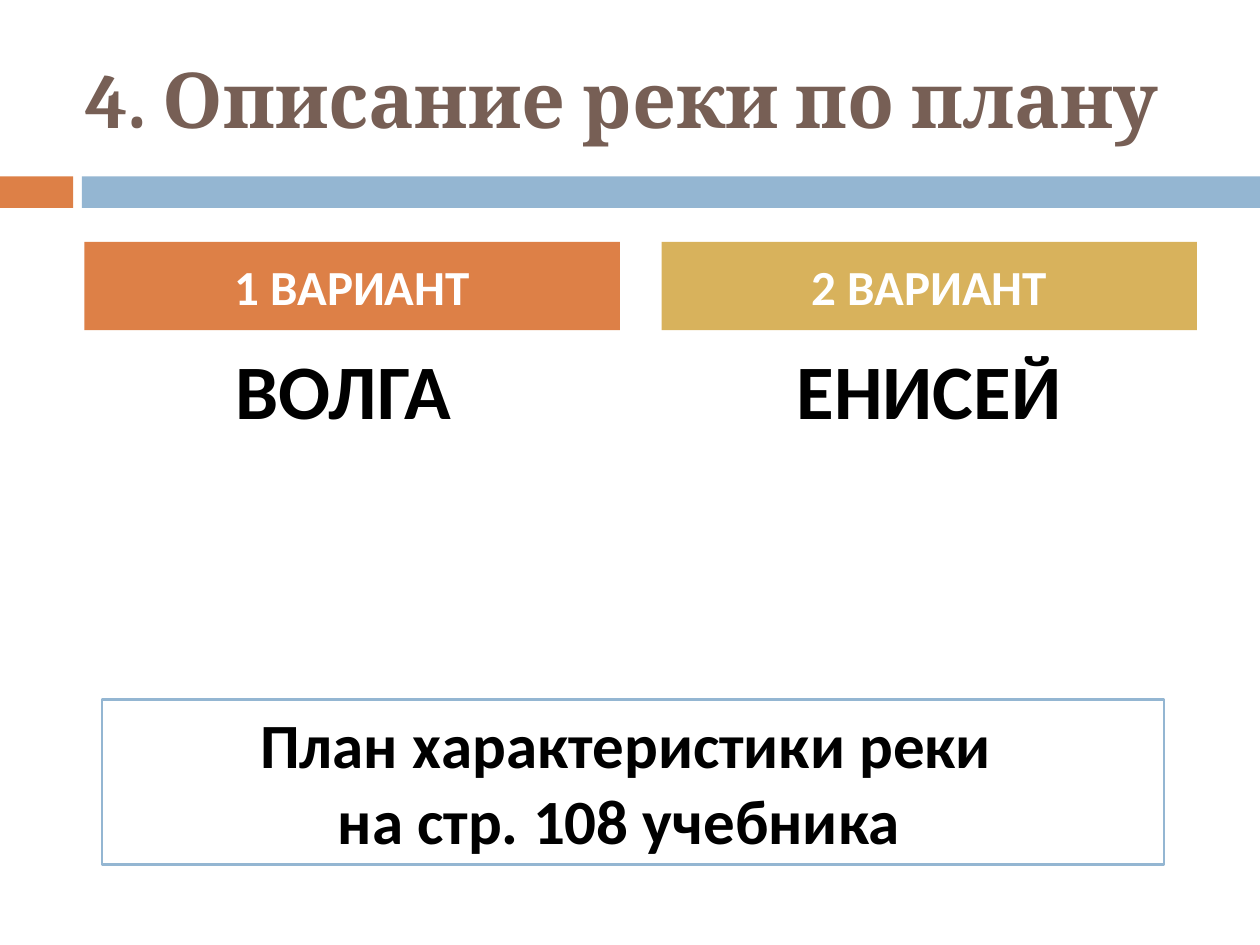
"""Build the slide that sets two river description variants."""
import pptx
import pptx.dml.color
import pptx.enum.shapes
import pptx.enum.text
import pptx.util

Inches = pptx.util.Inches
Pt = pptx.util.Pt
ALIGN = pptx.enum.text.PP_ALIGN
ANCHOR = pptx.enum.text.MSO_ANCHOR

COLORS = {
    "orange": "DD8047",
    "blue": "94B6D2",
    "gold": "D8B25C",
    "brown": "775F55",
    "white": "FFFFFF",
    "black": "000000",
}


def color(name):
    return pptx.dml.color.RGBColor.from_string(COLORS[name])


def add_block(page, left, top, width, height, fill, line=None):
    box = page.shapes.add_shape(
        pptx.enum.shapes.MSO_SHAPE.RECTANGLE,
        Inches(left), Inches(top), Inches(width), Inches(height))
    box.shadow.inherit = False
    box.fill.solid()
    box.fill.fore_color.rgb = color(fill)
    if line:
        box.line.color.rgb = color(line)
        box.line.width = Pt(1.5)
    else:
        box.line.fill.background()
    return box


def add_text_box(page, left, top, width, height):
    return page.shapes.add_textbox(
        Inches(left), Inches(top), Inches(width), Inches(height))


def write(box, lines, size, ink, font="Calibri", align=ALIGN.CENTER,
          anchor=ANCHOR.TOP, before=0):
    frame = box.text_frame
    frame.word_wrap = True
    frame.vertical_anchor = anchor
    for index, line in enumerate(lines):
        para = frame.add_paragraph() if index else frame.paragraphs[0]
        para.alignment = align
        para.space_before = Pt(before)
        span = para.add_run()
        span.text = line
        span.font.name = font
        span.font.size = Pt(size)
        span.font.bold = True
        span.font.color.rgb = color(ink)


def add_variant(page, left, heading, river, fill):
    header = add_block(page, left, 1.92, 4.25, 0.7, fill)
    write(header, [heading], 28, "white", anchor=ANCHOR.MIDDLE, before=7)
    body = add_text_box(page, left, 2.67, 4.25, 1.95)
    write(body, [river], 44, "black", before=7)


def main():
    deck = pptx.Presentation()
    deck.slide_width, deck.slide_height = Inches(10), Inches(7.5)
    page = deck.slides.add_slide(deck.slide_layouts[6])

    add_block(page, 0, 1.4, 0.58, 0.25, "orange")
    add_block(page, 0.65, 1.4, 9.35, 0.25, "blue")
    title = add_text_box(page, 0.58, 0.3, 8.92, 0.95)
    write(title, ["4. Описание реки по плану"], 44, "brown", font="Cambria",
          align=ALIGN.LEFT, anchor=ANCHOR.MIDDLE)

    add_variant(page, 0.67, "1 ВАРИАНТ", "ВОЛГА ", "orange")
    add_variant(page, 5.25, "2 ВАРИАНТ", "ЕНИСЕЙ", "gold")

    plan = add_block(page, 0.81, 5.55, 8.43, 1.31, "white", line="blue")
    write(plan, ["План характеристики реки ", "на стр. 108 учебника  "],
          36, "black")
    plan.text_frame.auto_size = pptx.enum.text.MSO_AUTO_SIZE.SHAPE_TO_FIT_TEXT

    deck.save("out.pptx")


if __name__ == "__main__":
    main()
